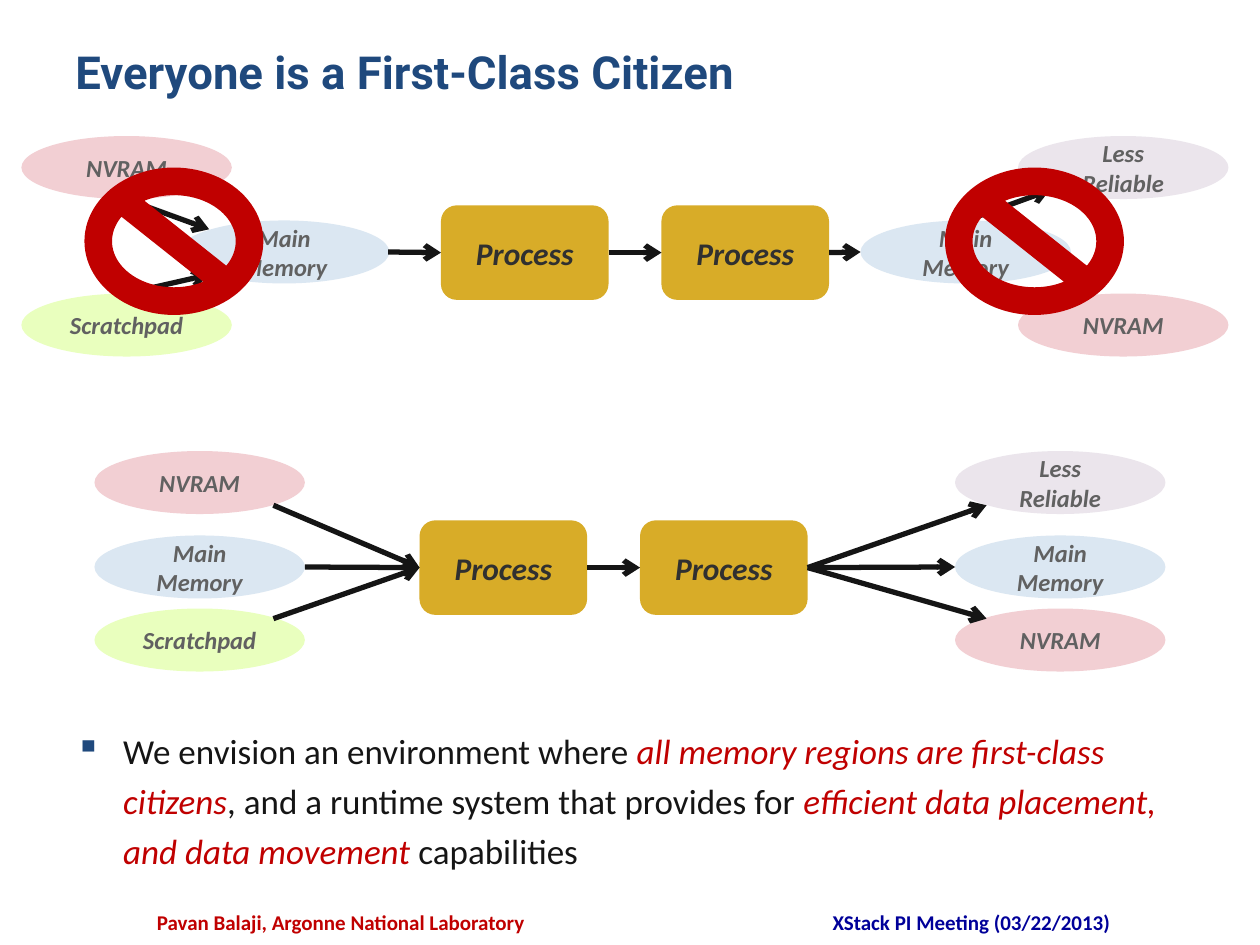
from lxml import etree
from pptx import Presentation
from pptx.dml.color import RGBColor
from pptx.enum import shapes, text
from pptx.oxml import ns
from pptx.util import Inches, Pt

COLORS = {
    "title": "1F497D", "body": "151515", "accent": "C00000", "meeting": "000099",
    "process": "D8AC28", "process text": "303030", "memory text": "616161",
    "Main Memory": "DBE7F2", "NVRAM": "F2CFD3", "Scratchpad": "E9FFBE",
    "Less Reliable": "EBE5EC",
}

presentation = Presentation()
presentation.slide_width = Inches(10)
presentation.slide_height = Inches(7.5)
slide = presentation.slides.add_slide(presentation.slide_layouts[6])


def style_run(run, size, color, bold=False, italic=False, name="Calibri"):
    run.font.size = Pt(size)
    run.font.name = name
    run.font.bold = bold
    run.font.italic = italic
    run.font.color.rgb = RGBColor.from_string(COLORS[color])


def add_filled(kind, left, top, width, height, fill, label="", size=14, color="memory text"):
    shape = slide.shapes.add_shape(
        kind, Inches(left), Inches(top), Inches(width), Inches(height))
    shape.shadow.inherit = False
    shape.fill.solid()
    shape.fill.fore_color.rgb = RGBColor.from_string(COLORS[fill])
    shape.line.fill.background()
    if label:
        shape.text_frame.text = label
        shape.text_frame.vertical_anchor = text.MSO_ANCHOR.MIDDLE
        paragraph = shape.text_frame.paragraphs[0]
        paragraph.alignment = text.PP_ALIGN.CENTER
        style_run(paragraph.runs[0], size, color, bold=True, italic=True)
    return shape


headings = [
    ("Everyone is a First-Class Citizen", 0.5, 0.3, 9, 0.87, 26, "title", "Roboto", text.PP_ALIGN.LEFT),
    ("Pavan Balaji, Argonne National Laboratory", 1.08, 7.17, 3.25, 0.25, 12, "accent", "Calibri",
     text.PP_ALIGN.CENTER),
    ("XStack PI Meeting (03/22/2013)", 5.75, 7.17, 3.92, 0.25, 12, "meeting", "Calibri",
     text.PP_ALIGN.CENTER),
]
for wording, left, top, width, height, size, color, name, alignment in headings:
    box = slide.shapes.add_textbox(Inches(left), Inches(top), Inches(width), Inches(height))
    box.text_frame.word_wrap = True
    box.text_frame.text = wording
    paragraph = box.text_frame.paragraphs[0]
    paragraph.alignment = alignment
    style_run(paragraph.runs[0], size, color, bold=True, name=name)

body = slide.shapes.add_textbox(Inches(0.5), Inches(5.67), Inches(9), Inches(1.42))
body.text_frame.word_wrap = True
paragraph = body.text_frame.paragraphs[0]
paragraph.line_spacing = 1.2
properties = paragraph._p.get_or_add_pPr()
properties.set("marL", str(Inches(0.38)))
properties.set("indent", str(-Inches(0.38)))
bullet_color = etree.SubElement(properties, ns.qn("a:buClr"))
etree.SubElement(bullet_color, ns.qn("a:srgbClr"), val=COLORS["title"])
etree.SubElement(properties, ns.qn("a:buChar"), char="▪")
for wording, emphasized in [
    ("We envision an environment where ", False),
    ("all memory regions are first-class citizens", True),
    (", and a runtime system that provides for ", False),
    ("efficient data placement, and data movement", True),
    (" capabilities", False),
]:
    run = paragraph.add_run()
    run.text = wording
    style_run(run, 20, "accent" if emphasized else "body", italic=emphasized)

processes = {}
for row, left, top in [("staged", 3.5, 1.63), ("direct", 3.33, 4.13)]:
    processes[row] = [
        add_filled(shapes.MSO_SHAPE.ROUNDED_RECTANGLE, left + offset, top, 1.33, 0.75,
                   "process", "Process", 18, "process text")
        for offset in (0, 1.75)
    ]

sources = ["NVRAM", "Main Memory", "Scratchpad"]
targets = ["Less Reliable", "Main Memory", "NVRAM"]
memory_columns = [
    (sources, [0.17, 1.42, 0.17], [1.08, 1.75, 2.33]),
    (targets, [8.08, 6.83, 8.08], [1.08, 1.75, 2.33]),
    (sources, [0.75] * 3, [3.58, 4.25, 4.83]),
    (targets, [7.58] * 3, [3.58, 4.25, 4.83]),
]
for labels, lefts, tops in memory_columns:
    for label, left, top in zip(labels, lefts, tops):
        add_filled(shapes.MSO_SHAPE.OVAL, left, top, 1.67, 0.5, label, label)

staged_first, staged_second = processes["staged"]
direct_first, direct_second = processes["direct"]
arrows = [
    ((1, 1.58), (1.66, 1.82), None, None),
    ((1, 2.33), (1.66, 2.18), None, None),
    ((3.08, 2), (3.5, 2), None, staged_first),
    ((4.83, 2), (5.25, 2), staged_first, staged_second),
    ((6.58, 2), (6.83, 2), staged_second, None),
    ((7.67, 1.75), (8.33, 1.51), None, None),
    ((7.67, 2.25), (8.33, 2.41), None, None),
    ((2.17, 4.01), (3.33, 4.5), None, direct_first),
    ((2.42, 4.5), (3.33, 4.5), None, direct_first),
    ((2.17, 4.91), (3.33, 4.5), None, direct_first),
    ((4.67, 4.5), (5.08, 4.5), direct_first, direct_second),
    ((6.42, 4.5), (7.83, 4.01), direct_second, None),
    ((6.42, 4.5), (7.58, 4.5), direct_second, None),
    ((6.42, 4.5), (7.83, 4.91), direct_second, None),
]
for start, end, start_process, end_process in arrows:
    connector = slide.shapes.add_connector(
        shapes.MSO_CONNECTOR.STRAIGHT, *map(Inches, start + end))
    if start_process is not None:
        connector.begin_connect(start_process, 3)
    if end_process is not None:
        connector.end_connect(end_process, 1)
    connector.line.width = Pt(3)
    connector.line.color.rgb = RGBColor.from_string(COLORS["body"])
    etree.SubElement(connector.line._get_or_add_ln(), ns.qn("a:tailEnd"), type="arrow")
    etree.SubElement(connector._element.spPr, ns.qn("a:effectLst"))

for left in (0.67, 7.5):
    add_filled(shapes.MSO_SHAPE.NO_SYMBOL, left, 1.33, 1.42, 1.17, "accent")

presentation.save("out.pptx")
